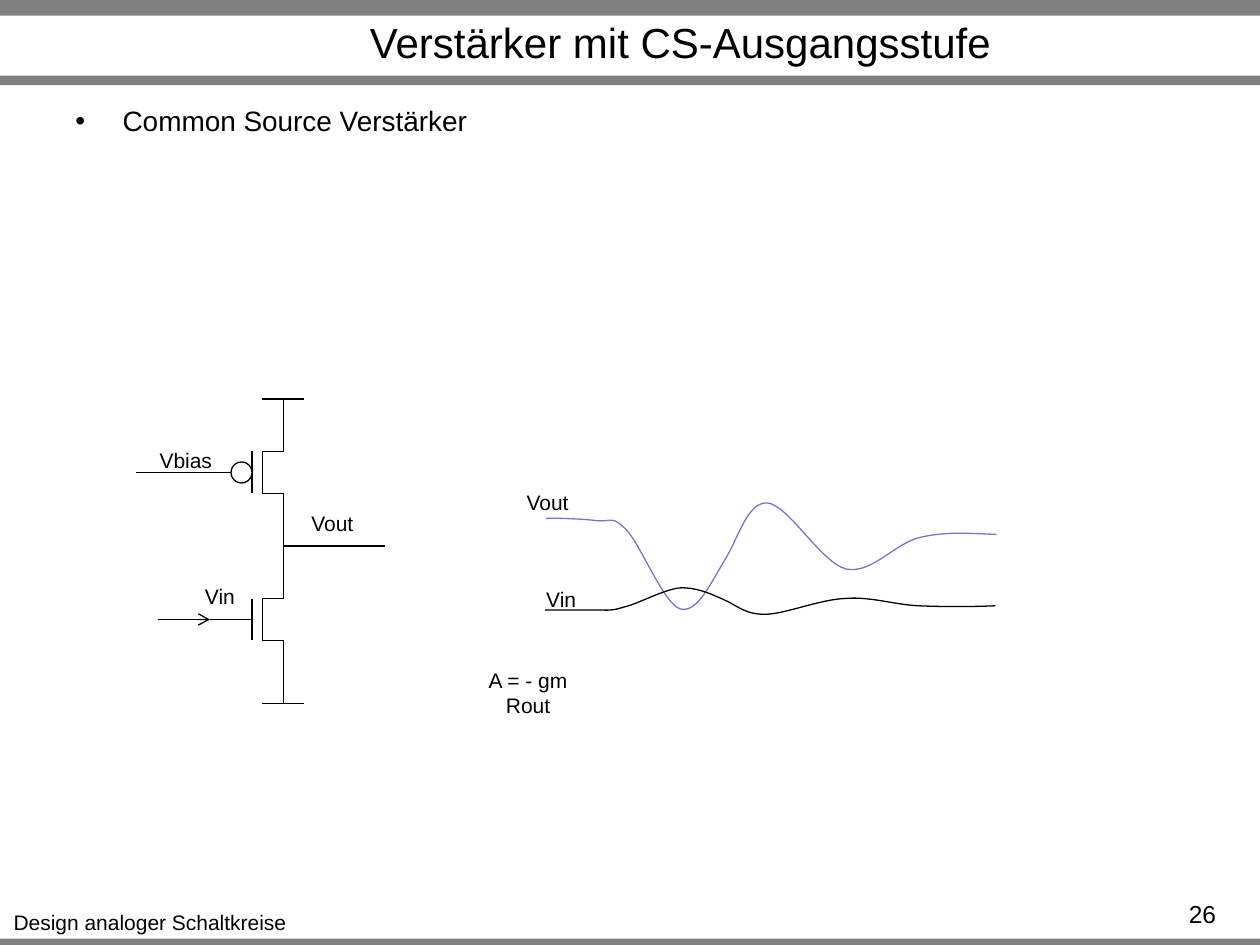
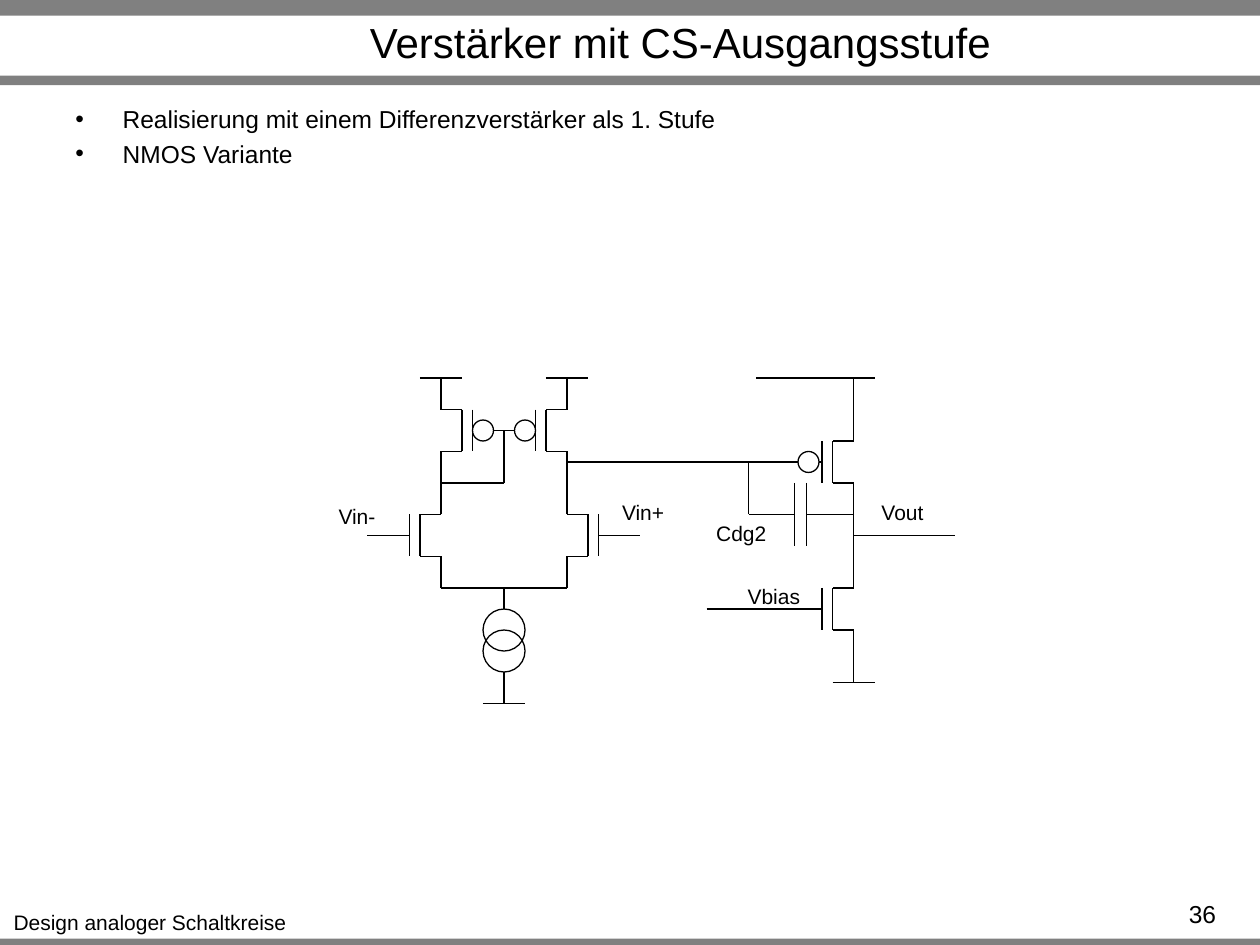
import lxml.etree
import pptx
import pptx.dml.color
import pptx.enum.shapes
import pptx.enum.text
import pptx.oxml.ns
import pptx.util

ALIGN = pptx.enum.text.PP_ALIGN
ANCHOR = pptx.enum.text.MSO_ANCHOR
SHAPES = pptx.enum.shapes.MSO_SHAPE
PX_PER_INCH = 120
WIDTH, HEIGHT = 1200, 900
BLACK, WHITE, GREY, BLUE = "000000", "FFFFFF", "808080", "7575D1"
TITLE = "Verstärker mit CS-Ausgangsstufe"
FOOTER = "Design analoger Schaltkreise"


def px(length):
    return pptx.util.Emu(round(length * pptx.util.Inches(1) / PX_PER_INCH))


def colour(value):
    return pptx.dml.color.RGBColor.from_string(value)


def add_element(parent, tag, **attributes):
    return lxml.etree.SubElement(parent, pptx.oxml.ns.qn(tag), attributes)


def apply(target, values):
    for name, value in values.items():
        setattr(target, name, value)


class Sketch:
    def __init__(self):
        self.deck = pptx.Presentation()
        self.deck.slide_width, self.deck.slide_height = px(WIDTH), px(HEIGHT)
        self.page = None

    def start_page(self, number, bullets, size):
        self.page = self.deck.slides.add_slide(self.deck.slide_layouts[5])
        for top, height in ((894, 6), (0, 15), (72, 9)):
            self.shape(SHAPES.RECTANGLE, 0, top, WIDTH, height, GREY, None)
        self.text(FOOTER, 0, 860, 286)
        self.text(str(number), 710, 850, 460, 50, 14, ALIGN.RIGHT, True)
        self.title(TITLE)
        self.bullets(bullets, size)

    def style(self, para, size, align):
        para.alignment = align
        apply(para.font, {"name": "Arial", "size": pptx.util.Pt(size), "bold": False})
        para.font.color.rgb = colour(BLACK)

    def title(self, words):
        box = self.page.shapes.title
        apply(box, {"left": px(156), "top": px(17), "width": px(984), "height": px(46)})
        apply(box.text_frame, {
            "text": words,
            "vertical_anchor": ANCHOR.MIDDLE,
            "auto_size": pptx.enum.text.MSO_AUTO_SIZE.NONE,
        })
        self.style(box.text_frame.paragraphs[0], 24, ALIGN.CENTER)

    def text(self, words, left, top, width, height=36, size=12, align=ALIGN.CENTER, wrap=False):
        box = self.page.shapes.add_textbox(px(left), px(top), px(width), px(height))
        apply(box.text_frame, {"text": words, "word_wrap": wrap})
        self.style(box.text_frame.paragraphs[0], size, align)

    def bullets(self, items, size):
        box = self.page.shapes.add_textbox(px(60), px(93), px(1080), px(40 * len(items) + 10))
        apply(box.text_frame, {"text": "\n".join(items), "word_wrap": True})
        for index, para in enumerate(box.text_frame.paragraphs):
            if index:
                para.space_before = pptx.util.Pt(3)
            properties = para._p.get_or_add_pPr()
            properties.set("marL", str(px(45)))
            properties.set("indent", str(px(-45)))
            add_element(properties, "a:buFont", typeface="Arial")
            add_element(properties, "a:buChar", char="•")
            self.style(para, size, ALIGN.LEFT)

    def outline(self, line, value):
        line.color.rgb = colour(value)
        line.width = pptx.util.Pt(0.75)

    def shape(self, kind, left, top, width, height, fill, line=BLACK):
        shape = self.page.shapes.add_shape(kind, px(left), px(top), px(width), px(height))
        shape.shadow.inherit = False
        if fill:
            shape.fill.solid()
            shape.fill.fore_color.rgb = colour(fill)
        else:
            shape.fill.background()
        if line:
            self.outline(shape.line, line)
        else:
            shape.line.fill.background()

    def circle(self, left, top, size, fill=None):
        self.shape(SHAPES.OVAL, left, top, size, size, fill)

    def wire(self, x1, y1, x2, y2, arrow=False):
        wire = self.page.shapes.add_connector(
            pptx.enum.shapes.MSO_CONNECTOR.STRAIGHT, px(x1), px(y1), px(x2), px(y2))
        self.outline(wire.line, BLACK)
        properties = wire.element.spPr
        if arrow:
            add_element(properties.get_or_add_ln(), "a:tailEnd", type="arrow")
        add_element(properties, "a:effectLst")

    def wires(self, segments):
        for segment in segments:
            self.wire(*segment)

    def rail(self, centre, y):
        self.wire(centre - 20, y, centre + 20, y)

    def transistor(self, x, y, side=-1):
        channel, gate, lead = x + 20 * side, x + 30 * side, x + 70 * side
        self.wires([
            (channel, y - 20, channel, y + 20),
            (gate, y - 20, gate, y + 20),
            (gate, y, lead, y),
        ])
        for end in (-1, 1):
            self.wire(x, y + 20 * end, channel, y + 20 * end)
            self.wire(x, y + 20 * end, x, y + 50 * end)

    def curve(self, points, value):
        corners = [(px(x), px(y)) for x, y in points]
        builder = self.page.shapes.build_freeform(*corners[0], scale=1.0)
        builder.add_line_segments(corners[1:], close=False)
        shape = builder.convert_to_shape()
        shape.shadow.inherit = False
        shape.fill.background()
        self.outline(shape.line, value)
        route = next(shape.element.iter(pptx.oxml.ns.qn("a:path")))
        steps = route.findall(pptx.oxml.ns.qn("a:lnTo"))
        for index in range(0, len(steps), 3):
            bend = add_element(route, "a:cubicBezTo")
            for step in steps[index:index + 3]:
                bend.append(step[0])
                route.remove(step)

    def labels(self, entries):
        for entry in entries:
            self.text(*entry)


VOUT_CURVE = [
    (520, 494), (517, 493), (556, 494), (569, 496), (582, 497),
    (583, 491), (596, 504), (610, 518), (632, 575), (648, 580),
    (664, 584), (676, 557), (690, 534), (704, 511), (712, 478),
    (731, 479), (751, 481), (782, 536), (806, 542), (830, 547),
    (853, 517), (876, 512), (900, 506), (924, 508), (949, 509),
]
VIN_CURVE = [
    (519, 581), (516, 581), (556, 581), (568, 581), (581, 581),
    (582, 582), (595, 578), (608, 575), (631, 562), (647, 560),
    (662, 559), (676, 565), (689, 571), (703, 577), (710, 586),
    (731, 585), (750, 584), (781, 571), (805, 570), (829, 568),
    (852, 576), (875, 577), (899, 578), (923, 578), (948, 577),
]


def common_source(sketch):
    sketch.start_page(26, ["Common Source Verstärker"], 16)
    stage = 270
    for gate_y in (450, 590):
        sketch.transistor(stage, gate_y)
    for rail_y in (380, 670):
        sketch.rail(stage, rail_y)
    sketch.wires([
        (stage, 410, stage, 380),
        (stage, 640, stage, 670),
        (stage, 500, stage, 540),
        (stage, 520, 367, 520),
        (130, 450, 240, 450),
        (150, 590, 200, 590, True),
    ])
    sketch.circle(220, 440, 20, WHITE)
    sketch.curve(VOUT_CURVE, BLUE)
    sketch.curve(VIN_CURVE, BLACK)
    sketch.labels([
        ("Vbias", 140, 420, 74),
        ("Vin", 183, 550, 53),
        ("Vout", 284, 480, 65),
        ("A = - gm Rout", 430, 630, 146),
        ("Vin", 508, 553, 53),
        ("Vout", 489, 460, 65),
    ])


def differential_input(sketch):
    sketch.start_page(36, ["Realisierung mit einem Differenzverstärker als 1. Stufe", "NMOS Variante"], 14)
    left, right, middle, output = 420, 540, 480, 813
    for x, side in ((left, -1), (right, 1)):
        sketch.transistor(x, 510, side)
        sketch.transistor(x, 410, -side)
        sketch.rail(x, 360)
    for gate_y in (440, 580):
        sketch.transistor(output, gate_y)
    for x, y in ((middle, 670), (output, 650)):
        sketch.rail(x, y)
    sketch.wires([
        (left, 560, right, 560),
        (middle, 560, middle, 580),
        (middle, 640, middle, 670),
        (middle, 410, middle, 460),
        (middle, 460, left, 460),
        (right, 440, 783, 440),
        (720, 360, 833, 360),
        (output, 390, output, 360),
        (output, 630, output, 650),
        (output, 490, output, 530),
        (output, 510, 910, 510),
        (673, 580, 783, 580),
        (output, 490, 768, 490),
        (768, 460, 768, 520),
        (757, 460, 757, 520),
        (757, 490, 713, 490),
        (713, 490, 713, 440),
    ])
    for top in (600, 580):
        sketch.circle(middle - 20, top, 40)
    for bubble_left, bubble_top in ((490, 400), (450, 400), (760, 430)):
        sketch.circle(bubble_left, bubble_top, 20, WHITE)
    sketch.labels([
        ("Vbias", 700, 550, 74),
        ("Vout", 827, 470, 65),
        ("Cdg2", 670, 490, 72),
        ("Vin+", 580, 470, 65),
        ("Vin-", 310, 474, 60),
    ])


def main():
    sketch = Sketch()
    common_source(sketch)
    differential_input(sketch)
    sketch.deck.save("out.pptx")


if __name__ == "__main__":
    main()
